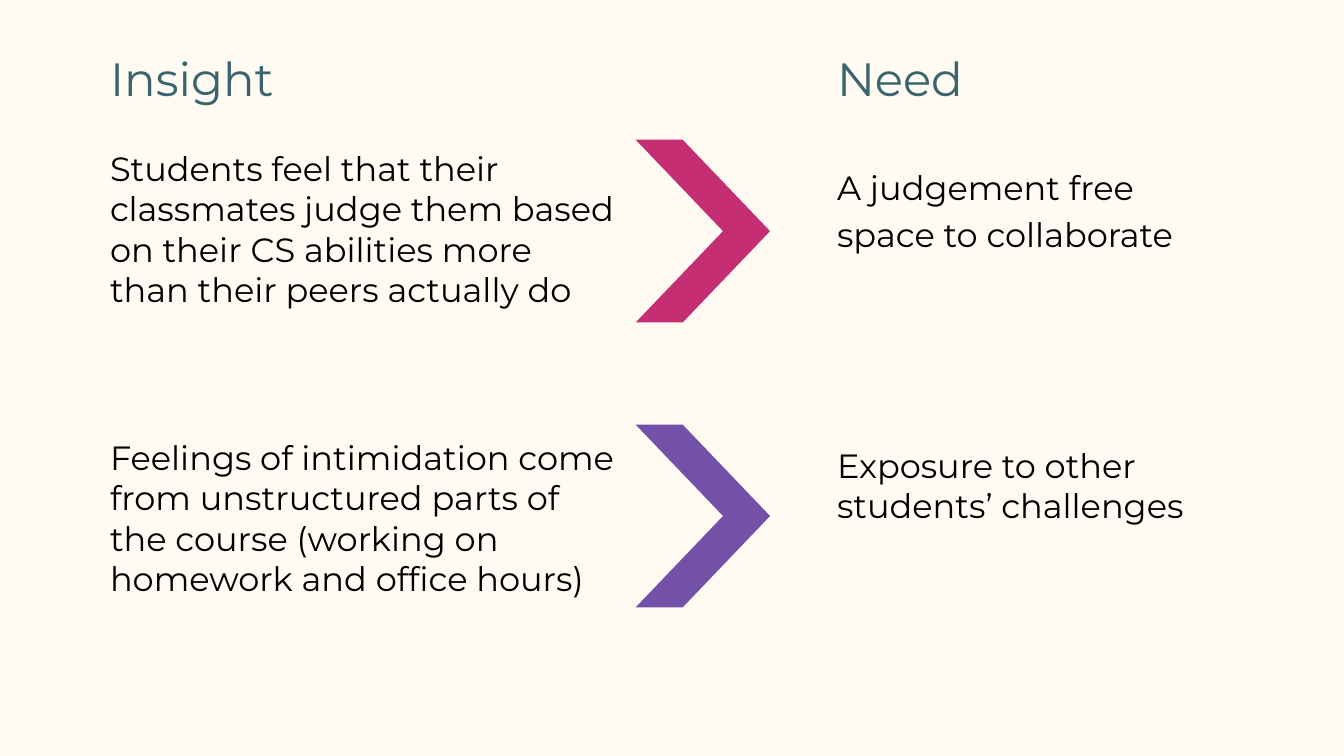
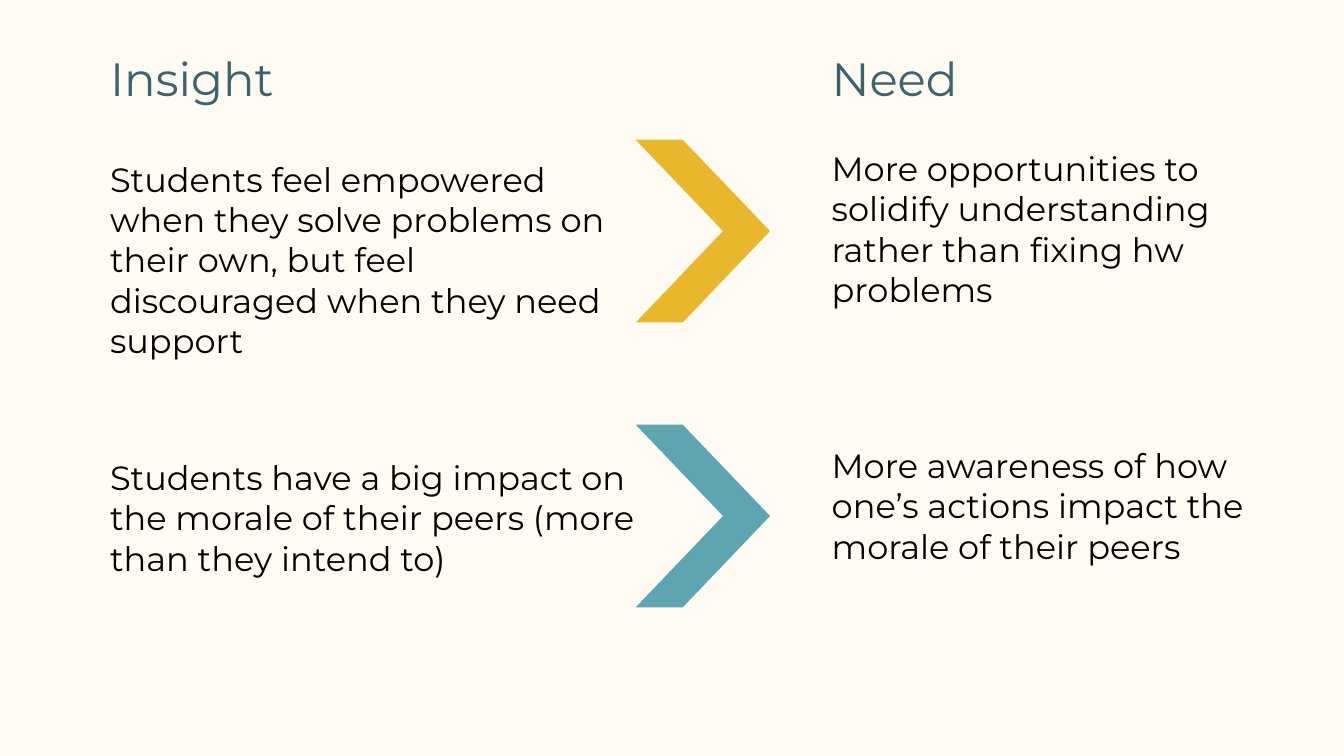
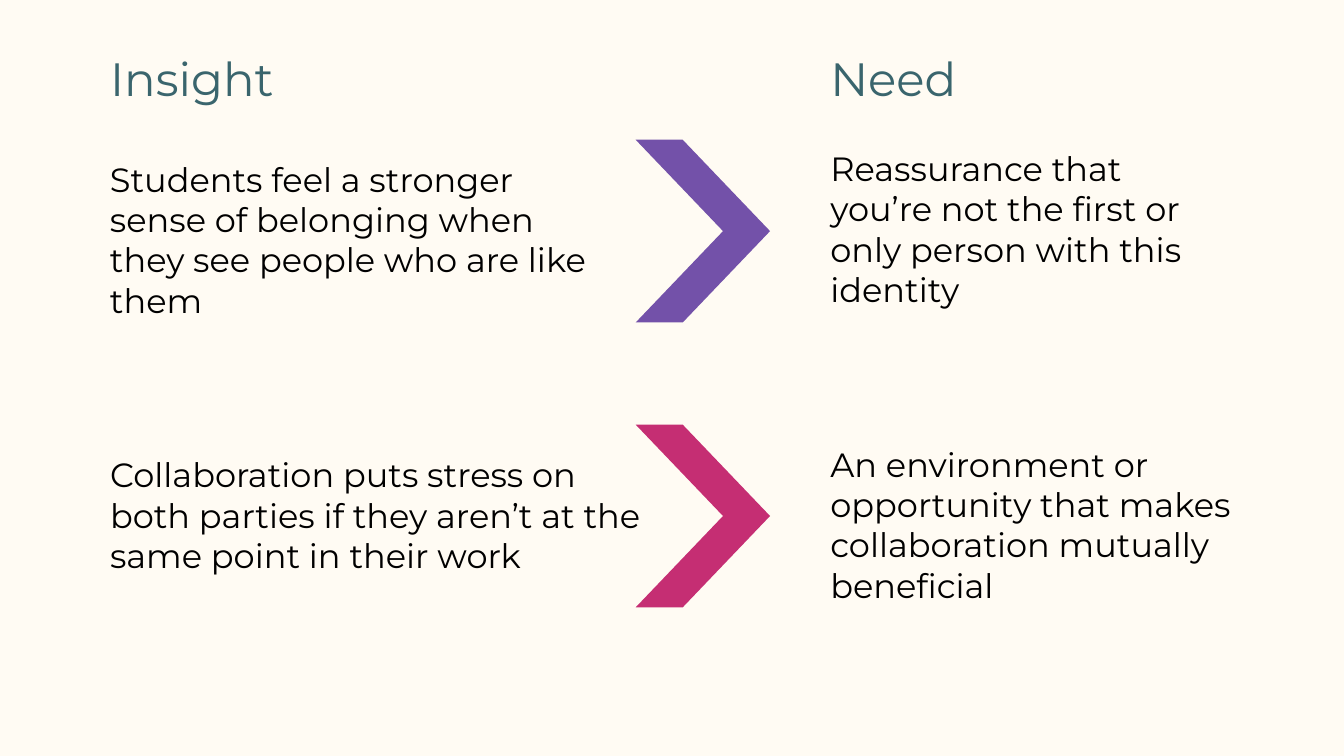
import dataclasses
import typing

import pptx
import pptx.dml.color
import pptx.enum.shapes
import pptx.enum.text
import pptx.util

Inches = pptx.util.Inches
FIT = pptx.enum.text.MSO_AUTO_SIZE


@dataclasses.dataclass(frozen=True)
class Theme:
    font: str = "Montserrat"
    head: int = 25
    body: int = 18
    cream: str = "FFFBF3"
    slate: str = "3A656D"
    black: str = "000000"
    pink: str = "C52E73"
    violet: str = "7351A9"
    gold: str = "E9B72B"
    teal: str = "5EA5B2"


class Note(typing.NamedTuple):
    text: str
    top: float
    width: float
    height: float
    space: typing.Optional[float] = None


class Pair(typing.NamedTuple):
    insight: Note
    need: Note
    color: str


class Page(typing.NamedTuple):
    right: float  # left edge of the need column
    pairs: typing.Tuple[Pair, Pair]


THEME = Theme()
WIDTH = 10
HEIGHT = WIDTH * 9 / 16
LEFT = 0.72
HEAD_TOP, HEAD_WIDTH, HEAD_HEIGHT = 0.27, 7.39, 0.63
ARROW_LEFT, ARROW_TOP, ARROW_STEP = 4.73, 1.04, 2.12

PAGES = [
    Page(6.13, (
        Pair(Note("Students feel that their classmates judge them based on "
                  "their CS abilities more than their peers actually do",
                  1, 3.99, 1.72),
             Note("A judgement free space to collaborate",
                  1.1, 2.91, 1.36, 1.15),
             THEME.pink),
        Pair(Note("Feelings of intimidation come from unstructured parts of "
                  "the course (working on homework and office hours)",
                  3.15, 3.99, 1.72),
             Note("Exposure to other students’ challenges",
                  3.21, 2.91, 1.41),
             THEME.violet))),
    Page(6.09, (
        Pair(Note("Students feel empowered when they solve problems on their "
                  "own, but feel discouraged when they need support",
                  1.08, 4.01, 2.02),
             Note("More opportunities to solidify understanding rather than "
                  "fixing hw problems",
                  1, 3.43, 2.02),
             THEME.gold),
        Pair(Note("Students have a big impact on the morale of their peers "
                  "(more than they intend to)",
                  3.3, 4.28, 1.41),
             Note("More awareness of how one’s actions impact the morale of "
                  "their peers",
                  3.21, 3.33, 1.41),
             THEME.teal))),
    Page(6.08, (
        Pair(Note("Students feel a stronger sense of belonging when they see "
                  "people who are like them",
                  1.08, 3.76, 1.41),
             Note("Reassurance that you’re not the first or only person with "
                  "this identity",
                  1, 3.12, 1.72),
             THEME.violet),
        Pair(Note("Collaboration puts stress on both parties if they aren’t "
                  "at the same point in their work",
                  3.28, 4.28, 1.11),
             Note("An environment or opportunity that makes collaboration "
                  "mutually beneficial",
                  3.2, 3.92, 1.41),
             THEME.pink))),
]


def paint(fill, color: str) -> None:
    fill.solid()
    fill.fore_color.rgb = pptx.dml.color.RGBColor.from_string(color)


def write(shape, text: str, *, size: int = THEME.body,
          color: str = THEME.black, space: typing.Optional[float] = None,
          fit=FIT.SHAPE_TO_FIT_TEXT) -> None:
    frame = shape.text_frame
    frame.word_wrap = True
    frame.auto_size = fit
    frame.vertical_anchor = pptx.enum.text.MSO_ANCHOR.TOP
    frame.margin_left = frame.margin_right = Inches(0.1)
    frame.margin_top = frame.margin_bottom = Inches(0.1)
    para = frame.paragraphs[0]
    para.alignment = pptx.enum.text.PP_ALIGN.LEFT
    if space:
        para.line_spacing = space
    run = para.add_run()
    run.text = text
    run.font.name = THEME.font
    run.font.size = pptx.util.Pt(size)
    paint(run.font.fill, color)


def add_heads(slide, right: float) -> None:
    style = dict(size=THEME.head, color=THEME.slate, fit=FIT.NONE)
    title = slide.shapes.title
    title.left, title.top = Inches(LEFT), Inches(HEAD_TOP)
    title.width, title.height = Inches(HEAD_WIDTH), Inches(HEAD_HEIGHT)
    write(title, "Insight", **style)
    need = slide.shapes.add_textbox(
        Inches(right), Inches(HEAD_TOP),
        Inches(WIDTH - right), Inches(HEAD_HEIGHT))
    write(need, "Need", **style)


def add_note(slide, note: Note, left: float) -> None:
    box = slide.shapes.add_textbox(
        Inches(left), Inches(note.top),
        Inches(note.width), Inches(note.height))
    write(box, note.text, space=note.space)


def add_arrow(slide, row: int, color: str) -> None:
    arrow = slide.shapes.add_shape(
        pptx.enum.shapes.MSO_SHAPE.CHEVRON,
        Inches(ARROW_LEFT), Inches(ARROW_TOP + row * ARROW_STEP),
        Inches(1), Inches(1.36))
    arrow.adjustments[0] = 0.65
    arrow.shadow.inherit = False
    arrow.line.fill.background()
    paint(arrow.fill, color)


def main() -> None:
    deck = pptx.Presentation()
    deck.slide_width, deck.slide_height = Inches(WIDTH), Inches(HEIGHT)
    paint(deck.slide_master.background.fill, THEME.cream)
    layout = deck.slide_layouts.get_by_name("Title Only")

    for page in PAGES:
        slide = deck.slides.add_slide(layout)
        add_heads(slide, page.right)
        # Each row leads from an insight to a need
        for row, pair in enumerate(page.pairs):
            add_note(slide, pair.insight, LEFT)
            add_arrow(slide, row, pair.color)
            add_note(slide, pair.need, page.right)

    deck.save("out.pptx")


if __name__ == "__main__":
    main()
